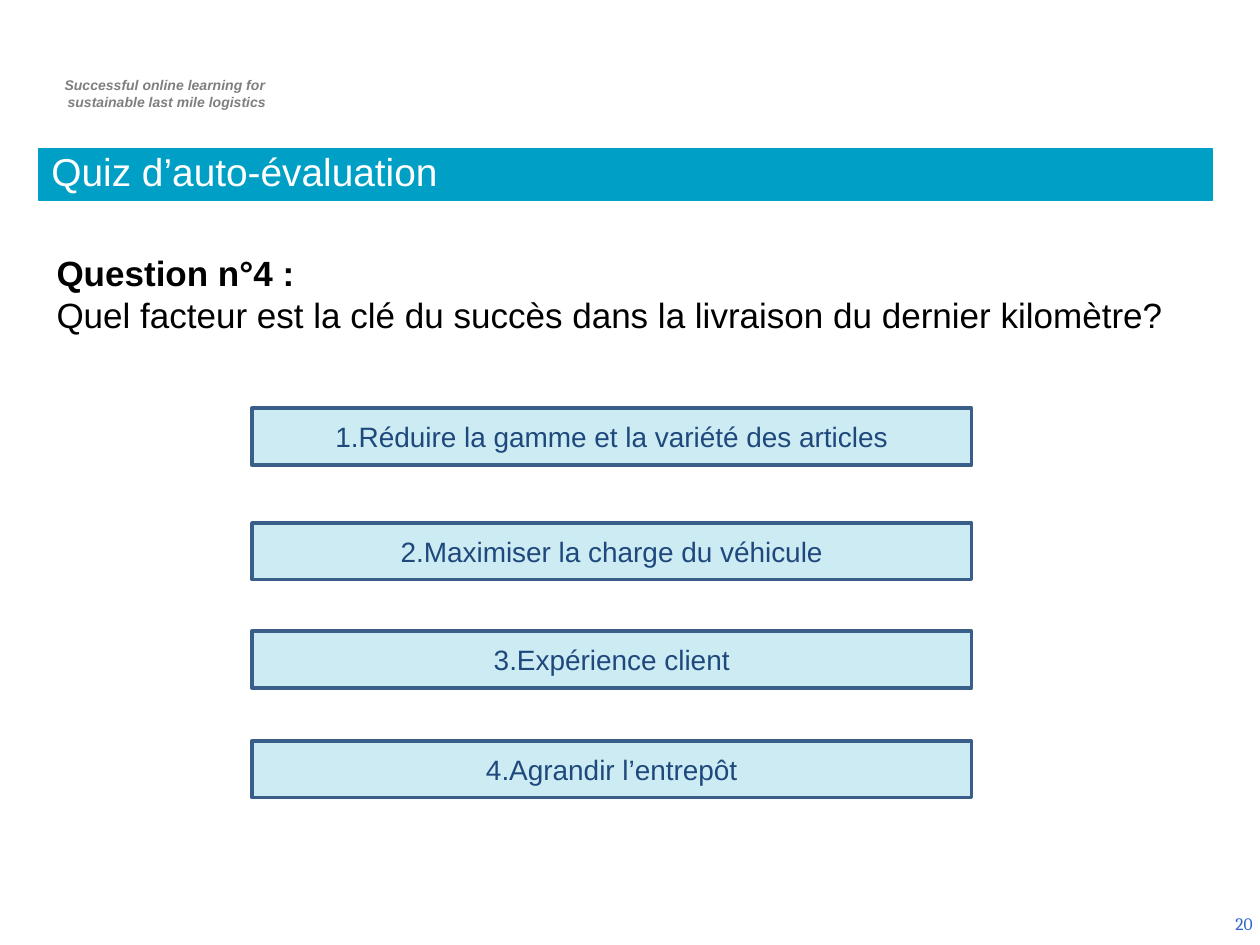
from dataclasses import dataclass

from lxml import etree
from pptx import Presentation
from pptx.dml.color import RGBColor
from pptx.enum import shapes, text
from pptx.oxml import ns
from pptx.util import Inches, Pt

LEFT, MID, RIGHT = text.PP_ALIGN.LEFT, text.PP_ALIGN.CENTER, text.PP_ALIGN.RIGHT
TOP, CENTRE, BASE = (text.MSO_ANCHOR.TOP, text.MSO_ANCHOR.MIDDLE,
                     text.MSO_ANCHOR.BOTTOM)


@dataclass(frozen=True)
class Font:
    size: float
    color: str
    name: str = "Arial"
    bold: bool = False
    italic: bool = False


@dataclass(frozen=True)
class Theme:
    teal: str = "009FC6"
    edge: str = "395E89"
    tint: int = 20
    tag: Font = Font(8, "7F7F7F", bold=True, italic=True)
    title: Font = Font(22.2, "FFFFFF")
    label: Font = Font(20, "000000", bold=True)
    query: Font = Font(20, "000000")
    answer: Font = Font(16, "1F497D")
    number: Font = Font(10, "3366CC", "Cambria")


@dataclass(frozen=True)
class Box:
    left: float
    top: float
    width: float
    height: float

    def place(self) -> list:
        return [Inches(n) for n in (self.left, self.top, self.width, self.height)]


@dataclass(frozen=True)
class Answer:
    top: float
    words: str


THEME = Theme()
ANSWERS = [
    Answer(3.24, "1.Réduire la gamme et la variété des articles"),
    Answer(4.15, "2.Maximiser la charge du véhicule"),
    Answer(5.01, "3.Expérience client"),
    Answer(5.88, "4.Agrandir l’entrepôt"),
]


def write(shape, lines: list[tuple[str, Font]], align=LEFT, anchor=TOP) -> None:
    """Fill a shape with one styled paragraph per line."""
    frame = shape.text_frame
    frame.word_wrap = True
    frame.vertical_anchor = anchor
    frame.text = "\n".join(words for words, _ in lines)
    for para, (_, font) in zip(frame.paragraphs, lines):
        para.alignment = align
        for run in para.runs:
            run.font.name = font.name
            run.font.size = Pt(font.size)
            run.font.bold = font.bold
            run.font.italic = font.italic
            run.font.color.rgb = RGBColor.from_string(font.color)


def label(slide, box: Box, lines: list[tuple[str, Font]], align=LEFT, anchor=TOP):
    shape = slide.shapes.add_textbox(*box.place())
    write(shape, lines, align, anchor)
    return shape


def bar(slide, box: Box, edge: str, width: float, alpha: int = 100):
    """Draw a teal rectangle, see-through when alpha is below 100."""
    shape = slide.shapes.add_shape(shapes.MSO_SHAPE.RECTANGLE, *box.place())
    shape.shadow.inherit = False
    shape.fill.solid()
    shape.fill.fore_color.rgb = RGBColor.from_string(THEME.teal)
    shape.line.color.rgb = RGBColor.from_string(edge)
    shape.line.width = Pt(width)
    if alpha < 100:
        color = shape._element.spPr.find(ns.qn("a:solidFill"))[0]
        etree.SubElement(color, ns.qn("a:alpha")).set("val", str(alpha * 1000))
    return shape


def main() -> None:
    deck = Presentation()
    deck.slide_width, deck.slide_height = Inches(10), Inches(7.5)
    slide = deck.slides.add_slide(deck.slide_layouts[6])

    # Project tagline
    tag = label(slide, Box(0.29, 0.56, 2.03, 0.37),
                [("Successful online learning for ", THEME.tag),
                 ("sustainable last mile logistics", THEME.tag)], MID)
    for para in tag.text_frame.paragraphs:
        para._p.get_or_add_pPr().set("marL", str(Inches(0.04)))

    # Slide number
    label(slide, Box(7.71, 7.13, 2.33, 0.4), [("20", THEME.number)], RIGHT, CENTRE)

    # Question
    label(slide, Box(0.35, 1.95, 9.31, 0.77),
          [("Question n°4 :", THEME.label),
           ("Quel facteur est la clé du succès dans la livraison du dernier kilomètre?",
            THEME.query)])

    # Answers
    for item in ANSWERS:
        shape = bar(slide, Box(2, item.top, 5.71, 0.45), THEME.edge, 2, THEME.tint)
        write(shape, [(item.words, THEME.answer)], MID, CENTRE)

    # Title band
    band = bar(slide, Box(0.31, 1.18, 9.31, 0.41), THEME.teal, 0.75)
    write(band, [("Quiz d’auto-évaluation", THEME.title)], LEFT, BASE)
    band.text_frame.paragraphs[0].line_spacing = 0.8

    deck.save("out.pptx")


if __name__ == "__main__":
    main()
